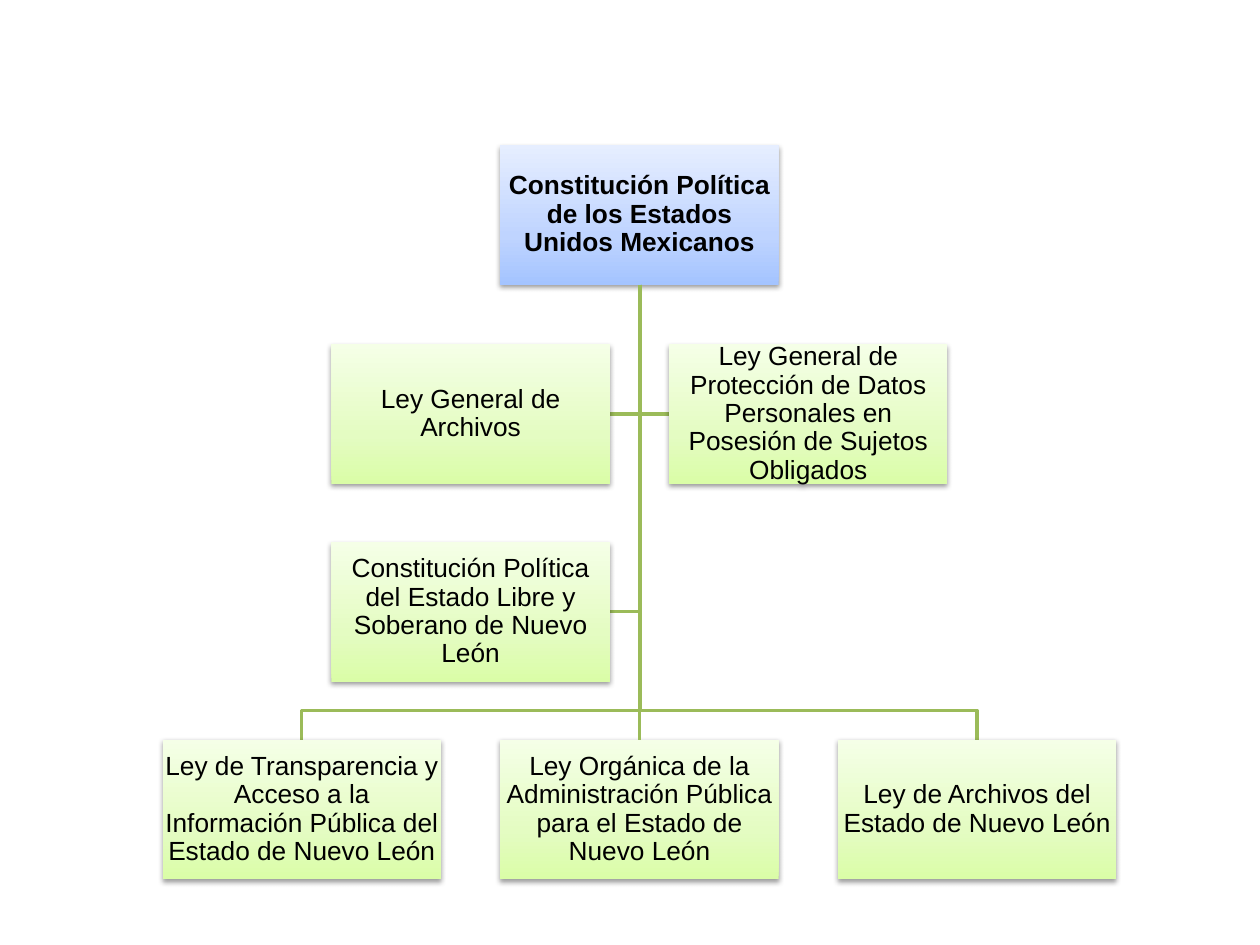
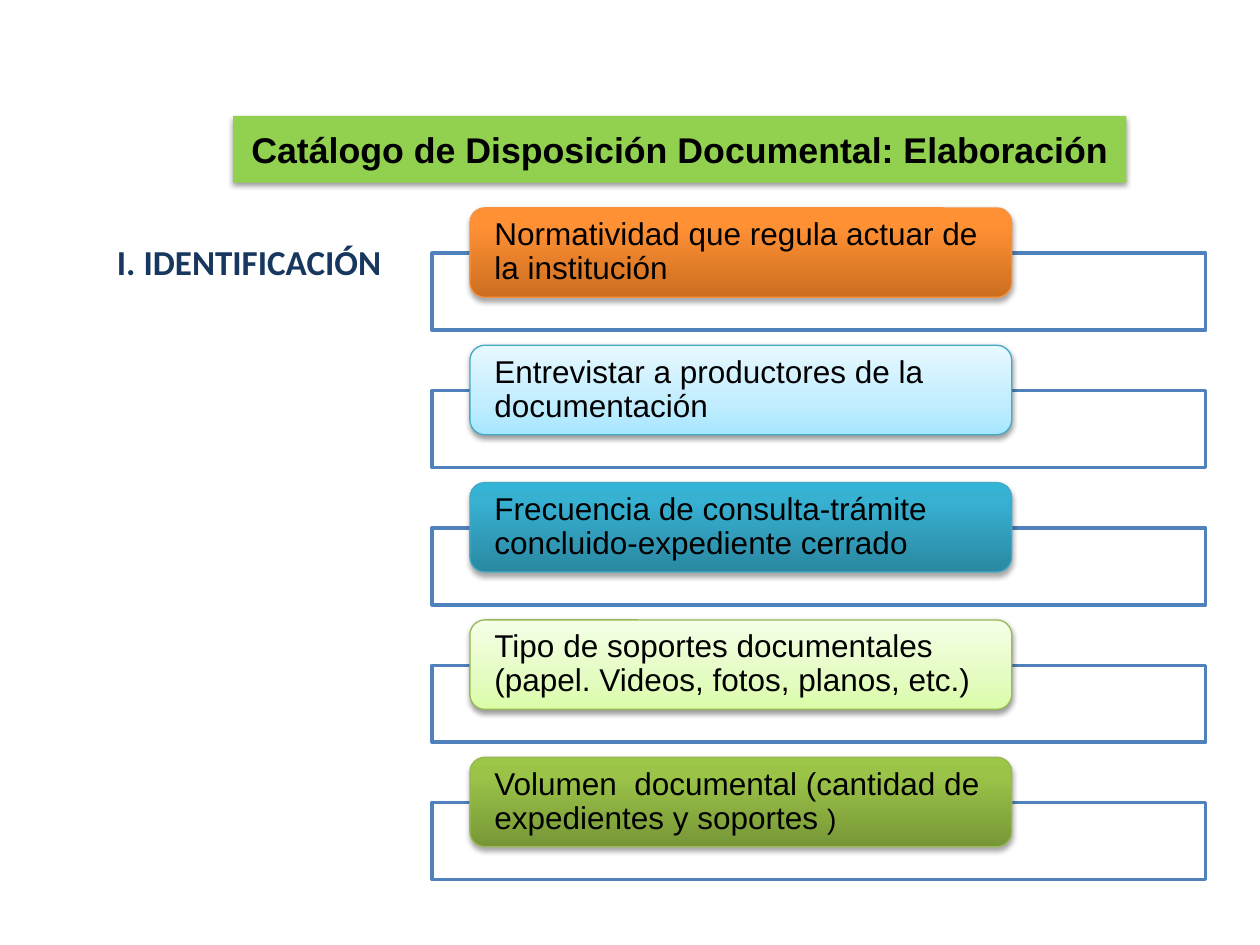
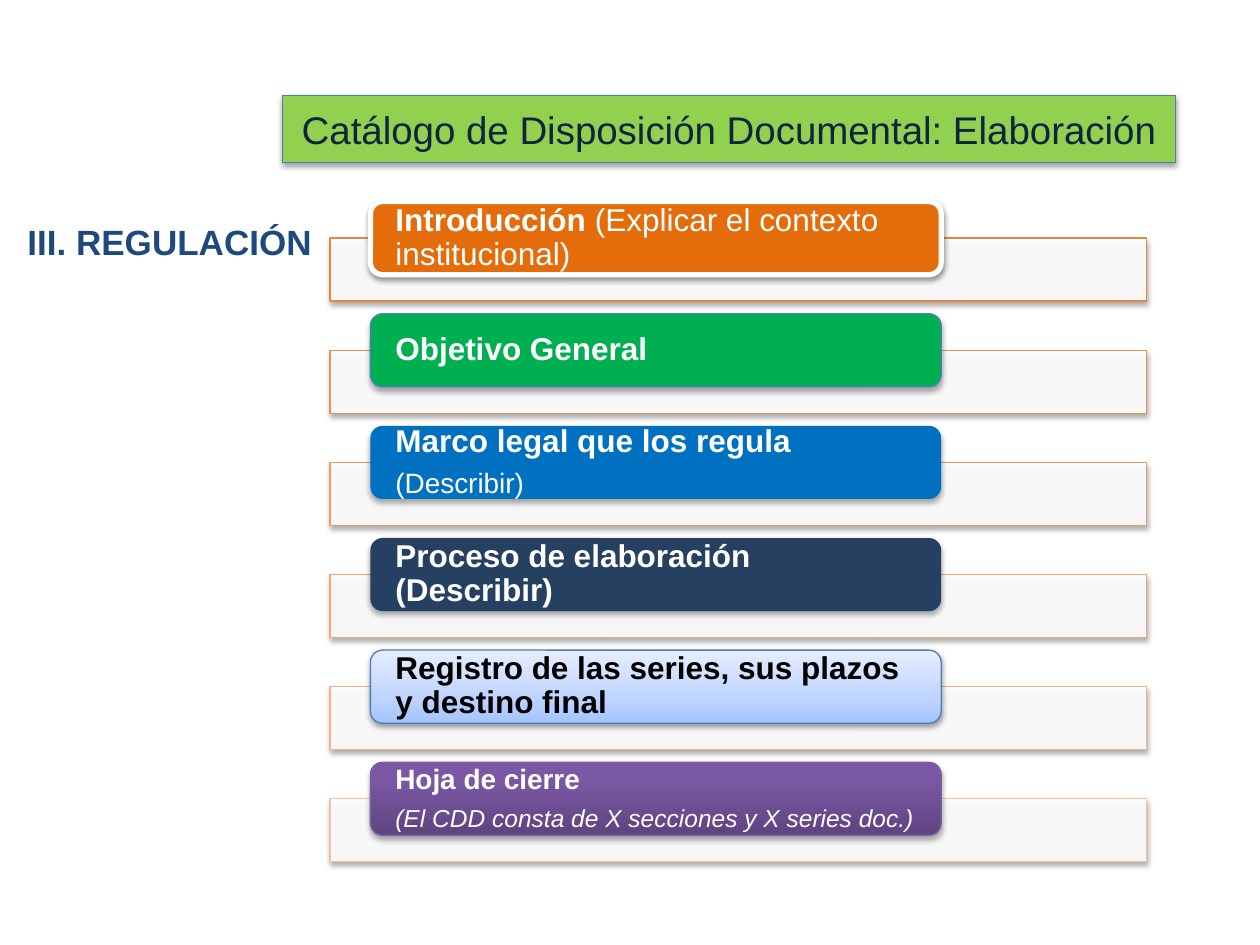
from lxml import etree
from pptx import Presentation
from pptx.dml.color import RGBColor
from pptx.enum.shapes import MSO_CONNECTOR, MSO_SHAPE
from pptx.enum.text import MSO_ANCHOR, MSO_AUTO_SIZE, PP_ALIGN
from pptx.oxml.ns import qn
from pptx.util import Inches, Pt

RECTANGLE, ROUNDED = MSO_SHAPE.RECTANGLE, MSO_SHAPE.ROUNDED_RECTANGLE
STRAIGHT = MSO_CONNECTOR.STRAIGHT
TOP, MIDDLE = MSO_ANCHOR.TOP, MSO_ANCHOR.MIDDLE
LEFT, CENTER = PP_ALIGN.LEFT, PP_ALIGN.CENTER
NO_AUTOFIT = MSO_AUTO_SIZE.NONE

# Colours
BLACK = RGBColor(0x00, 0x00, 0x00)
WHITE = RGBColor(0xFF, 0xFF, 0xFF)
LIME = RGBColor(0x92, 0xD0, 0x50)
OLIVE = RGBColor(0x9B, 0xBB, 0x59)
OLIVE_EDGE = RGBColor(0x98, 0xB9, 0x55)
ORANGE = RGBColor(0xE4, 0x6C, 0x0A)
ORANGE_EDGE = RGBColor(0xF6, 0x92, 0x40)
AQUA_EDGE = RGBColor(0x46, 0xAA, 0xC5)
BLUE = RGBColor(0x4F, 0x81, 0xBD)
BLUE_EDGE = RGBColor(0x4B, 0x7E, 0xBC)
PURPLE_EDGE = RGBColor(0x7D, 0x60, 0xA0)
GREEN = RGBColor(0x00, 0xB0, 0x50)
STRONG_BLUE = RGBColor(0x00, 0x70, 0xC0)
DARK_BLUE = RGBColor(0x25, 0x40, 0x61)
NAVY = RGBColor(0x17, 0x37, 0x5E)
LABEL_BLUE = RGBColor(0x1F, 0x49, 0x7D)
TITLE_NAVY = RGBColor(0x0F, 0x24, 0x3E)
PEACHES = [RGBColor.from_string(code) for code in
           ("E08840", "E79251", "ED9C63", "F2A677", "F6B28B", "FABF9F")]

# Gradients, as (position in percent, colour) from bottom to top
PALE_BLUE = [(0, "A4C4FF"), (35, "BFD4FF"), (100, "E6EEFF")]
PALE_GREEN = [(0, "DAFDA7"), (35, "E4FCC2"), (100, "F5FFE7")]
PALE_AQUA = [(0, "A7E6FF"), (35, "C1EDFF"), (100, "E7F8FF")]
DEEP_ORANGE = [(0, "CC6E20"), (80, "FF9034"), (100, "FF9136")]
DEEP_AQUA = [(0, "2A88A2"), (80, "37B1D2"), (100, "34B4D6")]
DEEP_GREEN = [(0, "779737"), (80, "9BC348"), (100, "9DC746")]
DEEP_PURPLE = [(0, "5F4480"), (80, "7B58A6"), (100, "7C57A8")]

# Shadows, as (opacity in percent, distance in points)
SOFT, STRONG = (38, 1.6), (35, 1.8)


def style_shape(shape, fill=None, line=None, width=0.75, shadow=None, opacity=None):
    properties = shape._element.spPr
    if fill is None:
        shape.fill.background()
    elif isinstance(fill, list):
        shape.fill.gradient()
        shape.fill.gradient_angle = 90
        stops = properties.find(".//" + qn("a:gsLst"))
        for stop in list(stops):
            stops.remove(stop)
        for position, code in fill:
            stop = etree.SubElement(stops, qn("a:gs"), pos=str(position * 1000))
            etree.SubElement(stop, qn("a:srgbClr"), val=code)
    else:
        shape.fill.solid()
        shape.fill.fore_color.rgb = fill
    if opacity:
        color = properties.find(qn("a:solidFill")).find(qn("a:srgbClr"))
        etree.SubElement(color, qn("a:alpha"), val=str(opacity * 1000))
    if line is None:
        shape.line.fill.background()
    else:
        shape.line.color.rgb = line
        shape.line.width = Pt(width)
    shape.shadow.inherit = False
    if shadow:
        strength, distance = shadow
        outer = etree.SubElement(
            properties.find(qn("a:effectLst")), qn("a:outerShdw"),
            blurRad=str(Pt(3.1)), dist=str(Pt(distance)), dir="5400000", rotWithShape="0")
        color = etree.SubElement(outer, qn("a:srgbClr"), val="000000")
        etree.SubElement(color, qn("a:alpha"), val=str(strength * 1000))


def write_text(shape, paragraphs, color, align, anchor=MIDDLE, margins=None, spacing=0.9):
    """Each paragraph is a list of (text, font values) runs."""
    frame = shape.text_frame
    frame.word_wrap = True
    frame.auto_size = NO_AUTOFIT
    frame.vertical_anchor = anchor
    if margins:
        frame.margin_left = frame.margin_right = Inches(margins[0])
        frame.margin_top = frame.margin_bottom = Inches(margins[1])
    for index, runs in enumerate(paragraphs):
        paragraph = frame.add_paragraph() if index else frame.paragraphs[0]
        paragraph.alignment = align
        paragraph.line_spacing = spacing
        if index < len(paragraphs) - 1:
            paragraph.space_after = Pt(6)
        for text, values in runs:
            run = paragraph.add_run()
            run.text = text
            run.font.color.rgb = color
            for name, value in {"name": "Arial", "bold": False, **values}.items():
                setattr(run.font, name, value)


# Font values
PLAIN_14_ITALIC = {"size": Pt(14), "italic": True}
PLAIN_15, BOLD_15 = {"size": Pt(15)}, {"size": Pt(15), "bold": True}
PLAIN_16, BOLD_16 = {"size": Pt(16)}, {"size": Pt(16), "bold": True}
PLAIN_18, BOLD_18 = {"size": Pt(18)}, {"size": Pt(18), "bold": True}
BOLD_20 = {"size": Pt(20), "bold": True}

presentation = Presentation()
presentation.slide_width = Inches(10)
presentation.slide_height = Inches(7.5)
title_layout, blank_layout = presentation.slide_layouts[5], presentation.slide_layouts[6]

# Slide 1: hierarchy of laws, in columns counted from the centre
slide = presentation.slides.add_slide(blank_layout)
BOX_WIDTH, BOX_HEIGHT, HALF_COLUMN = 2.21, 1.11, 1.34
ROOT_LEFT, ROOT_TOP, LEAF_TOP, BRANCH_TOP = 3.97, 1.15, 5.87, 5.64
TRUNK_X, TRUNK_TOP = 5.08, 2.26
laws = [
    ("Constitución Política de los Estados Unidos Mexicanos", 0, ROOT_TOP),
    ("Ley General de Archivos", -1, 2.73),
    ("Ley General de Protección de Datos Personales en Posesión de Sujetos Obligados", 1, 2.73),
    ("Constitución Política del Estado Libre y Soberano de Nuevo León", -1, 4.3),
    ("Ley de Transparencia y Acceso a la Información Pública del Estado de Nuevo León",
     -2, LEAF_TOP),
    ("Ley Orgánica de la Administración Pública para el Estado de Nuevo León", 0, LEAF_TOP),
    ("Ley de Archivos del Estado de Nuevo León", 2, LEAF_TOP),
]
for text, column, top in laws:
    is_root = top == ROOT_TOP
    left = ROOT_LEFT + column * HALF_COLUMN

    # Bent branch from the trunk to the box
    if column:
        if top == LEAF_TOP:
            center = left + BOX_WIDTH / 2
            points = [(TRUNK_X, BRANCH_TOP), (center, BRANCH_TOP), (center, top)]
        else:
            middle = top + BOX_HEIGHT / 2
            side = left + BOX_WIDTH if column < 0 else left
            points = [(TRUNK_X, middle), (side, middle)]
        builder = slide.shapes.build_freeform(Inches(TRUNK_X), Inches(TRUNK_TOP))
        builder.add_line_segments([(Inches(x), Inches(y)) for x, y in points], close=False)
        style_shape(builder.convert_to_shape(), line=OLIVE, width=2)

    box = slide.shapes.add_shape(RECTANGLE, Inches(left), Inches(top),
                                 Inches(BOX_WIDTH), Inches(BOX_HEIGHT))
    style_shape(box, PALE_BLUE if is_root else PALE_GREEN, shadow=SOFT)
    write_text(box, [[(text, BOLD_15 if is_root else PLAIN_15)]], BLACK, CENTER,
               margins=(0.01, 0.01))
    if is_root:
        root = box
    elif column == 0:
        central_leaf = box

# Straight trunk
trunk = slide.shapes.add_connector(STRAIGHT, Inches(TRUNK_X), Inches(TRUNK_TOP),
                                   Inches(TRUNK_X), Inches(LEAF_TOP))
trunk.begin_connect(root, 2)
trunk.end_connect(central_leaf, 0)
trunk.line.color.rgb = OLIVE
trunk.line.width = Pt(2)
etree.SubElement(trunk._element.spPr, qn("a:effectLst"))

# Slides 2 and 3: title, section label and a list of tabs on bars
# Each tab holds paragraphs, text colour, fill, line, line width, shadow
identification_tabs = [
    ([[("Normatividad que regula actuar de la institución", PLAIN_18)]],
     BLACK, DEEP_ORANGE, ORANGE_EDGE, 0.75, STRONG),
    ([[("Entrevistar a productores de la documentación", PLAIN_18)]],
     BLACK, PALE_AQUA, AQUA_EDGE, 0.75, SOFT),
    ([[("Frecuencia de consulta-trámite concluido-expediente cerrado", PLAIN_18)]],
     BLACK, DEEP_AQUA, AQUA_EDGE, 0.75, STRONG),
    ([[("Tipo de soportes documentales (papel. Videos, fotos, planos, etc.)", PLAIN_18)]],
     BLACK, PALE_GREEN, OLIVE_EDGE, 0.75, SOFT),
    ([[("Volumen  documental (cantidad de expedientes y soportes ", PLAIN_18),
       (")", PLAIN_16)]],
     BLACK, DEEP_GREEN, OLIVE_EDGE, 0.75, STRONG),
]
regulation_tabs = [
    ([[("Introducción ", BOLD_18), ("(Explicar el contexto institucional)", PLAIN_18)]],
     WHITE, ORANGE, WHITE, 3, SOFT),
    ([[("Objetivo General", BOLD_18)]], WHITE, GREEN, BLUE_EDGE, 0.75, STRONG),
    ([[("Marco legal que los regula", BOLD_18)], [("(Describir)", PLAIN_16)]],
     WHITE, STRONG_BLUE, None, 0, STRONG),
    ([[("Proceso de elaboración (Describir)", BOLD_18)]], WHITE, DARK_BLUE, None, 0, STRONG),
    ([[("Registro de las series, sus plazos y destino final", BOLD_18)]],
     BLACK, PALE_BLUE, BLUE_EDGE, 0.75, SOFT),
    ([[("Hoja de cierre", BOLD_16)],
      [("(El CDD consta de X secciones y X series doc.)", PLAIN_14_ITALIC)]],
     WHITE, DEEP_PURPLE, PURPLE_EDGE, 0.75, STRONG),
]
sections = [
    {"title_at": (1.85, 0.92), "title_font": {"size": Pt(20.4), "bold": True},
     "title_color": BLACK, "title_line": None,
     "label": "I. IDENTIFICACIÓN", "label_at": (0.83, 1.86, 2.36, 0.71),
     "label_font": {**BOLD_20, "name": "Calibri"}, "label_color": NAVY,
     "tabs": identification_tabs, "top": 1.65, "step": 1.09,
     "tab_left": 3.73, "tab_size": (4.3, 0.71), "margin": 0.16,
     "bar_left": 3.43, "bar_offset": 0.36, "bar_size": (6.14, 0.61),
     "bar_lines": [BLUE] * 5, "bar_width": 2, "bar_shadow": None},
    {"title_at": (2.24, 0.76), "title_font": {"size": Pt(22)},
     "title_color": TITLE_NAVY, "title_line": BLUE_EDGE,
     "label": "III. REGULACIÓN", "label_at": (0.12, 1.7, 2.46, 0.53),
     "label_font": BOLD_20, "label_color": LABEL_BLUE,
     "tabs": regulation_tabs, "top": 1.6, "step": 0.89,
     "tab_left": 2.94, "tab_size": (4.53, 0.58), "margin": 0.17,
     "bar_left": 2.62, "bar_offset": 0.29, "bar_size": (6.48, 0.5),
     "bar_lines": PEACHES, "bar_width": 0.75, "bar_shadow": STRONG},
]
for section in sections:
    slide = presentation.slides.add_slide(title_layout)

    # Title
    title = slide.shapes.title
    title.left, title.top = [Inches(value) for value in section["title_at"]]
    title.width, title.height = Inches(7.09), Inches(0.53)
    style_shape(title, LIME, section["title_line"], shadow=SOFT)
    write_text(title, [[("Catálogo de Disposición Documental: Elaboración",
                         section["title_font"])]],
               section["title_color"], CENTER, spacing=1.0)

    # Section label
    label = slide.shapes.add_textbox(*[Inches(value) for value in section["label_at"]])
    label.fill.solid()
    label.fill.fore_color.rgb = WHITE
    write_text(label, [[(section["label"], section["label_font"])]],
               section["label_color"], LEFT, anchor=TOP, spacing=1.0)

    # Bars with their tabs
    for index, tab_values in enumerate(section["tabs"]):
        paragraphs, color, fill, line, width, shadow = tab_values
        top = section["top"] + index * section["step"]
        bar = slide.shapes.add_shape(
            RECTANGLE, Inches(section["bar_left"]), Inches(top + section["bar_offset"]),
            *[Inches(value) for value in section["bar_size"]])
        style_shape(bar, WHITE, section["bar_lines"][index], section["bar_width"],
                    section["bar_shadow"], opacity=90)
        tab = slide.shapes.add_shape(
            ROUNDED, Inches(section["tab_left"]), Inches(top),
            *[Inches(value) for value in section["tab_size"]])
        style_shape(tab, fill, line, width, shadow)
        write_text(tab, paragraphs, color, LEFT, margins=(section["margin"], 0))

presentation.save("out.pptx")
